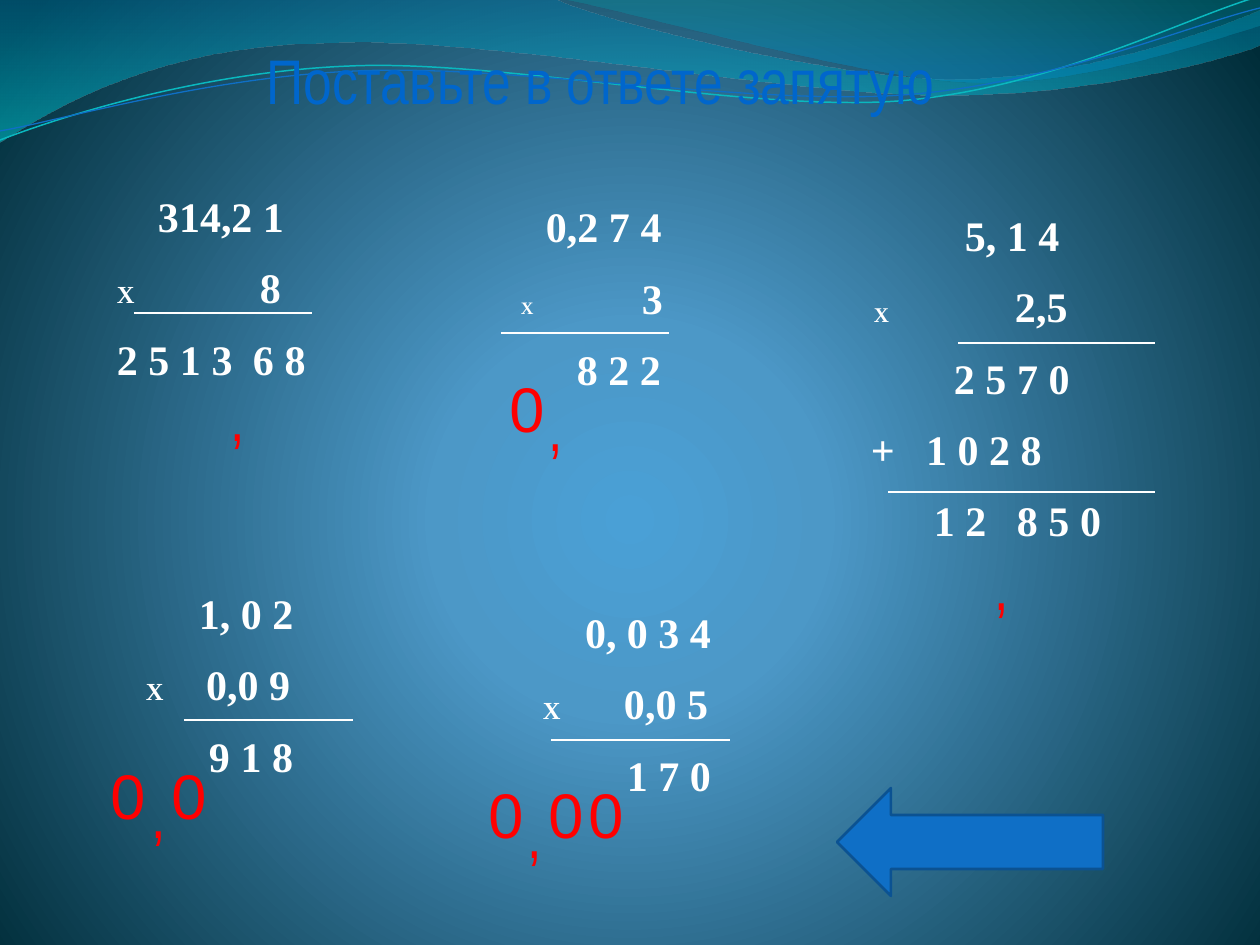
from typing import NamedTuple

from lxml import etree
from pptx import Presentation
from pptx import util as u
from pptx.dml.color import RGBColor
from pptx.enum import shapes, text
from pptx.oxml.ns import qn

SCALE = 914400 / 126  # EMU in one px
WHITE = RGBColor(0xFF, 0xFF, 0xFF)
BLACK = RGBColor(0, 0, 0)
RED = RGBColor(0xFF, 0, 0)
BLUE = RGBColor(0x00, 0x66, 0xCC)
PALE = RGBColor(0x99, 0xCC, 0xFF)
ARROW = RGBColor(0x0F, 0x6F, 0xC6)
EDGE = RGBColor(0x0B, 0x52, 0x92)
CYAN = RGBColor(0x0A, 0xB8, 0xBF)


class Bit(NamedTuple):
    x: int  # offset from the left edge of the text
    text: str
    size: int = 24


class Sum(NamedTuple):
    box: tuple
    rows: list
    rules: list  # (x1, x2, y) of each line


class Wave(NamedTuple):
    start: tuple
    steps: list  # three points for a curve, one for a straight step
    stops: tuple = ()
    line: RGBColor = ARROW
    width: float = 0


def px(n: int) -> u.Emu:
    return u.Emu(round(n * SCALE))


def add(root, tag: str, **attrs):
    return etree.SubElement(root, qn(tag), {k: str(v) for k, v in attrs.items()})


def blend(grad, stops: tuple):
    """Empty a gradient and give it (position, colour, alpha) stops."""
    for kid in list(grad):
        grad.remove(kid)
    group = add(grad, "a:gsLst")
    for pos, color, alpha in stops:
        stop = add(group, "a:gs", pos=pos * 1000)
        tint = add(stop, "a:srgbClr", val=color)
        if alpha < 100:
            add(tint, "a:alpha", val=alpha * 1000)


def draw_wave(slide, wave: Wave):
    ends = [wave.start] + [step[-1] for step in wave.steps]
    left, top = (min(axis) for axis in zip(*ends))
    form = slide.shapes.build_freeform(*wave.start, scale=SCALE)
    form.add_line_segments(ends[1:], close=bool(wave.stops))
    shape = form.convert_to_shape()
    # bend the straight segments into Bezier curves
    for node, step in zip(list(shape.element.iter(qn("a:lnTo"))), wave.steps):
        if len(step) == 3:
            bend = etree.Element(qn("a:cubicBezTo"))
            for x, y in step:
                add(bend, "a:pt", x=x - left, y=y - top)
            node.getparent().replace(node, bend)
    shape.shadow.inherit = False
    if wave.stops:
        shape.fill.gradient()
        grad = shape.element.find(".//" + qn("a:gradFill"))
        blend(grad, wave.stops)
        add(grad, "a:lin", ang=5400000, scaled=0)
        shape.line.fill.background()
    else:
        shape.fill.background()
        shape.line.color.rgb = wave.line
        shape.line.width = u.Pt(wave.width)


def place(shape, box: tuple, wrap: bool):
    shape.left, shape.top, shape.width, shape.height = map(px, box)
    frame = shape.text_frame
    frame.word_wrap = wrap
    frame.auto_size = text.MSO_AUTO_SIZE.NONE
    frame.vertical_anchor = text.MSO_ANCHOR.TOP
    frame.margin_left = frame.margin_right = px(12)
    frame.margin_top = frame.margin_bottom = px(6)
    return frame


def add_run(para, words: str, size: int, face: str, color: RGBColor):
    run = para.add_run()
    run.text = words
    run.font.size = u.Pt(size)
    run.font.name = face
    run.font.color.rgb = color
    return run


def draw_sign(shape, box: tuple, words: str, face: str, color: RGBColor,
              rim: RGBColor, width: float):
    """Large centred text with an outline."""
    para = place(shape, box, False).paragraphs[0]
    para.alignment = text.PP_ALIGN.CENTER
    add_run(para, words, 36, face, color)
    line = etree.Element(qn("a:ln"), w=str(u.Pt(width)))
    add(add(line, "a:solidFill"), "a:srgbClr", val=rim)
    shape.element.find(".//" + qn("a:rPr")).insert(0, line)


def draw_sum(slide, task: Sum):
    shape = slide.shapes.add_textbox(0, 0, 0, 0)
    frame = place(shape, task.box, True)
    for i, row in enumerate(task.rows):
        para = frame.add_paragraph() if i else frame.paragraphs[0]
        para.space_before = u.Pt(11.8 if i else 0)
        for bit in row:
            tab = "\t" if bit.x else ""
            run = add_run(para, tab + bit.text, bit.size, "Times New Roman", WHITE)
            run.font.bold = True
    # tab stops line the digits up
    for node, row in zip(shape.element.iter(qn("a:pPr")), task.rows):
        stops = [bit.x for bit in row if bit.x]
        if stops:
            tabs = add(node, "a:tabLst")
            for x in stops:
                add(tabs, "a:tab", pos=px(x), algn="l")
    for x1, x2, y in task.rules:
        rule = slide.shapes.add_connector(
            shapes.MSO_CONNECTOR.STRAIGHT, px(x1), px(y), px(x2), px(y))
        rule.line.color.rgb = WHITE
        rule.line.width = u.Pt(0.75)
        add(rule.element.spPr, "a:effectLst")


WAVES = [
    Wave((-1, -1), [
        [(554, -1)], [(600, 21), (837, 79), (955, 79)],
        [(1075, 79), (1207, 33), (1260, 11)], [(1261, 45)],
        [(1239, 55), (1096, 96), (940, 95)], [(784, 95), (481, 35), (324, 43)],
        [(163, 45), (58, 105), (-1, 142)]],
        ((0, "0074A1", 45), (100, "00C6CF", 55))),
    Wave((559, -1), [
        [(641, 14), (859, 78), (969, 82)], [(1079, 87), (1211, 40), (1260, 26)],
        [(1260, 0)]],
        ((0, "00A1A9", 30), (80, "008BBF", 45))),
    Wave((0, 140), [
        [(60, 117), (199, 72), (349, 66)], [(498, 59), (747, 112), (898, 101)],
        [(1050, 89), (1182, 19), (1257, -3)]], line=CYAN, width=0.85),
    Wave((0, 131), [
        [(59, 121), (207, 77), (357, 71)], [(508, 64), (752, 106), (903, 95)],
        [(1053, 84), (1186, 26), (1260, 8)]], line=ARROW, width=0.75),
]

SUMS = [
    Sum((105, 185, 238, 214),
        [[Bit(41, "314,2 1")], [Bit(0, "X", 14), Bit(143, "8")],
         [Bit(0, "2 5 1 3"), Bit(136, "6 8")]], [(134, 312, 313)]),
    Sum((492, 195, 228, 214),
        [[Bit(42, "0,2 7 4")], [Bit(17, "X", 10), Bit(138, "3")],
         [Bit(73, "8 2 2")]], [(501, 669, 333)]),
    Sum((859, 204, 307, 365),
        [[Bit(94, "5, 1 4")], [Bit(3, "X", 12), Bit(144, "2,5")],
         [Bit(83, "2 5 7 0")], [Bit(0, "+"), Bit(55, "1 0 2 8")],
         [Bit(63, "1 2"), Bit(146, "8 5 0")]],
        [(958, 1155, 343), (888, 1155, 492)]),
    Sum((134, 582, 248, 214),
        [[Bit(53, "1, 0 2")], [Bit(0, "X", 14), Bit(60, "0,0 9")],
         [Bit(63, "9 1 8")]], [(184, 353, 720)]),
    Sum((531, 601, 208, 214),
        [[Bit(42, "0, 0 3 4")], [Bit(0, "X", 14), Bit(81, "0,0 5")],
         [Bit(84, "1 7 0")]], [(551, 730, 740)]),
]
COMMAS = [(233, 373), (530, 790), (154, 770), (997, 542), (551, 383)]
ZEROS = [(512, 363), (113, 750), (174, 750), (551, 770), (591, 770), (491, 770)]


def main():
    deck = Presentation()
    deck.slide_width, deck.slide_height = px(1260), px(945)
    slide = deck.slides.add_slide(deck.slide_layouts[5])

    # Background
    slide.background.fill.gradient()
    grad = slide.element.find(".//" + qn("p:bgPr") + "/" + qn("a:gradFill"))
    blend(grad, ((0, "4AA0D6", 100), (25, "4C98C7", 100), (100, "002C38", 100)))
    add(add(grad, "a:path", path="circle"), "a:fillToRect",
        l=10000, t=110000, r=10000, b=100000)
    for wave in WAVES:
        draw_wave(slide, wave)

    # Title, brought in front of the waves
    title = slide.shapes.title
    title.element.getparent().append(title.element)
    draw_sign(title, (154, 35, 893, 78), "Поставьте в ответе запятую",
              "Arial Narrow", BLUE, PALE, 1.5)

    # Sums, then the red answer marks
    for task in SUMS:
        draw_sum(slide, task)
    for spots, size, mark in ((COMMAS, (10, 40), (",", "Arial Narrow", RED, PALE, 1.5)),
                              (ZEROS, (30, 30), ("0", "Arial", RED, BLACK, 0.75))):
        for spot in spots:
            draw_sign(slide.shapes.add_textbox(0, 0, 0, 0), spot + size, *mark)

    # Back arrow
    arrow = slide.shapes.add_shape(
        shapes.MSO_SHAPE.LEFT_ARROW, px(837), px(788), px(266), px(108))
    arrow.shadow.inherit = False
    arrow.fill.solid()
    arrow.fill.fore_color.rgb = ARROW
    arrow.line.color.rgb = EDGE
    arrow.line.width = u.Pt(1.5)
    deck.save("out.pptx")


if __name__ == "__main__":
    main()
